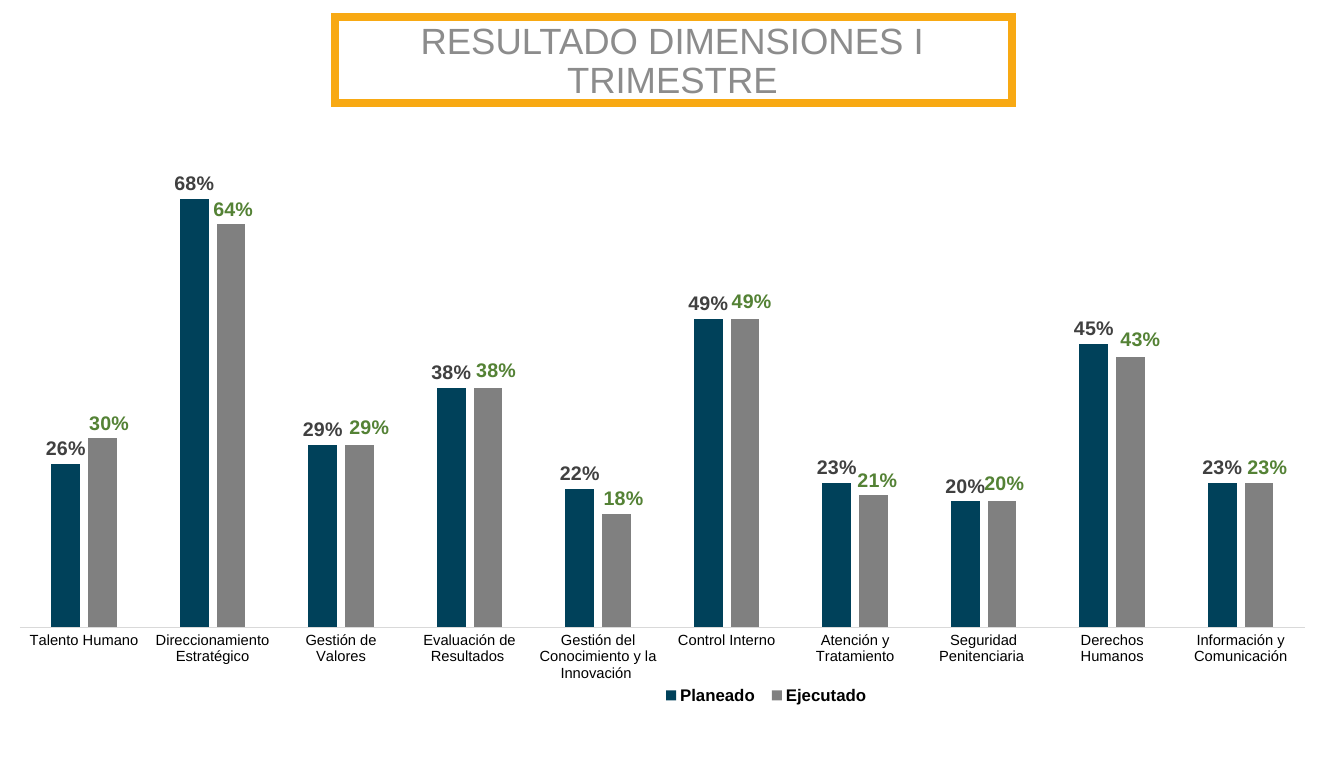
"""Slide with the planned and executed results of each dimension in the first quarter."""
from copy import deepcopy

from lxml import etree
from pptx import Presentation
from pptx.chart.data import CategoryChartData
from pptx.dml.color import RGBColor
from pptx.enum.chart import XL_CHART_TYPE, XL_LABEL_POSITION, XL_LEGEND_POSITION, XL_TICK_MARK
from pptx.enum.shapes import MSO_SHAPE
from pptx.enum.text import MSO_ANCHOR, PP_ALIGN
from pptx.oxml.ns import qn
from pptx.util import Cm, Pt

TITLE = "RESULTADO DIMENSIONES I TRIMESTRE"
RESULTS = [
    ("Talento Humano", 0.26, 0.30),
    ("Direccionamiento Estratégico", 0.68, 0.64),
    ("Gestión de Valores", 0.29, 0.29),
    ("Evaluación de Resultados ", 0.38, 0.38),
    ("Gestión del Conocimiento y la Innovación ", 0.22, 0.18),
    ("Control Interno", 0.49, 0.49),
    ("Atención y Tratamiento", 0.23, 0.21),
    ("Seguridad Penitenciaria ", 0.20, 0.20),
    ("Derechos Humanos", 0.45, 0.43),
    ("Información y Comunicación", 0.23, 0.23),
]
EXECUTED_LABEL_SHIFTS = [
    (0.17, 0), (0.06, 0), (0.25, -0.05), (0.21, -0.05), (0.18, 0),
    (0.17, -0.05), (0.1, 0.02), (0.06, -0.08), (0.25, -0.05), (0.21, 0),
]

NAVY = RGBColor(0x00, 0x41, 0x5A)
GRAY = RGBColor(0x80, 0x80, 0x80)
DARK_GRAY = RGBColor(0x40, 0x40, 0x40)
GREEN = RGBColor(0x54, 0x82, 0x35)
ORANGE = RGBColor(0xF8, 0xA9, 0x13)
TITLE_GRAY = RGBColor(0x8C, 0x8C, 0x8C)
AXIS_GRAY = RGBColor(0xD9, 0xD9, 0xD9)
BLACK = RGBColor(0, 0, 0)
SERIES_STYLES = [("Planeado", NAVY, DARK_GRAY), ("Ejecutado", GRAY, GREEN)]

COLUMNS = XL_CHART_TYPE.COLUMN_CLUSTERED
OUTSIDE_END = XL_LABEL_POSITION.OUTSIDE_END
LEGEND_BOTTOM = XL_LEGEND_POSITION.BOTTOM
NO_TICKS = XL_TICK_MARK.NONE
RECTANGLE = MSO_SHAPE.RECTANGLE
MIDDLE = MSO_ANCHOR.MIDDLE
CENTER = PP_ALIGN.CENTER

CHART_WIDTH, CHART_HEIGHT = 33.32, 15.19
PLOT_AREA = (0.53, 0.36, 32.32, 12.68)
LEGEND_AREA = (16.5, 14.45, 5.6, 0.6)


def set_font(font, size, color, bold=False, name="Arial"):
    font.size, font.bold, font.name = Pt(size), bold, name
    font.color.rgb = color


def manual_layout(modes, lengths):
    layout = etree.Element(qn("c:layout"))
    manual = etree.SubElement(layout, qn("c:manualLayout"))
    for tag, value in modes:
        etree.SubElement(manual, qn(f"c:{tag}"), val=value)
    for tag, length, whole in zip("xywh", lengths, (CHART_WIDTH, CHART_HEIGHT) * 2):
        etree.SubElement(manual, qn(f"c:{tag}"), val=str(length / whole))
    return layout


def place(element, position, modes, area):
    for old in element.findall(qn("c:layout")):
        element.remove(old)
    edges = [("xMode", "edge"), ("yMode", "edge")]
    element.insert(position, manual_layout(modes + edges, area))


def shift_labels(labels, shifts):
    parts = [part for part in labels if part.tag != qn("c:showLeaderLines")]
    for index, shift in enumerate(shifts):
        label = etree.Element(qn("c:dLbl"))
        etree.SubElement(label, qn("c:idx"), val=str(index))
        label.append(manual_layout([], shift))
        label.extend([deepcopy(part) for part in parts])
        labels.insert(index, label)


def add_title(slide):
    frame = slide.shapes.add_shape(RECTANGLE, Cm(8.43), Cm(0.43), Cm(17.02), Cm(2.16))
    frame.shadow.inherit = False
    frame.fill.background()
    frame.line.color.rgb = ORANGE
    frame.line.width = Pt(6)
    outline = frame._element.spPr.find(qn("a:ln"))
    etree.SubElement(outline, qn("a:miter"), lim="800000")
    title = slide.shapes.add_textbox(Cm(10.31), Cm(0.56), Cm(13.21), Cm(2)).text_frame
    title.word_wrap = True
    title.vertical_anchor = MIDDLE
    line = title.paragraphs[0]
    line.text = TITLE
    line.alignment = CENTER
    line.line_spacing = 0.9
    set_font(line.font, 26, TITLE_GRAY)


def add_results(slide):
    dimensions, *values = zip(*RESULTS)
    data = CategoryChartData(number_format="0%")
    data.categories = dimensions
    for (name, _, _), shares in zip(SERIES_STYLES, values):
        data.add_series(name, shares)
    chart = slide.shapes.add_chart(
        COLUMNS, Cm(-0.03), Cm(2.75), Cm(CHART_WIDTH), Cm(CHART_HEIGHT), data).chart
    set_font(chart.font, 9, BLACK, name="Roboto")
    chart.has_title = False

    plot = chart.plots[0]
    plot.gap_width, plot.overlap = 219, -27
    plot.vary_by_categories = False
    for series, (_, fill, label_color) in zip(plot.series, SERIES_STYLES):
        series.format.fill.solid()
        series.format.fill.fore_color.rgb = fill
        series.invert_if_negative = False
        labels = series.data_labels
        labels.show_value = True
        labels.number_format, labels.number_format_is_linked = "0%", False
        labels.position = OUTSIDE_END
        set_font(labels.font, 14, label_color, bold=True)
    executed = plot.series[1]
    shift_labels(executed.data_labels._element, EXECUTED_LABEL_SHIFTS)

    shares_axis = chart.value_axis
    shares_axis.minimum_scale, shares_axis.maximum_scale = 0, 0.8
    shares_axis.has_major_gridlines = False
    shares_axis.visible = False
    dimension_axis = chart.category_axis
    dimension_axis.major_tick_mark = dimension_axis.minor_tick_mark = NO_TICKS
    dimension_axis.format.line.color.rgb = AXIS_GRAY
    dimension_axis.format.line.width = Pt(0.75)
    set_font(dimension_axis.tick_labels.font, 10.5, BLACK)

    chart.has_legend = True
    chart.legend.position = LEGEND_BOTTOM
    chart.legend.include_in_layout = False
    set_font(chart.legend.font, 12, BLACK, bold=True)
    place(chart.legend._element, 1, [], LEGEND_AREA)
    plot_area = chart._chartSpace.find(".//" + qn("c:plotArea"))
    place(plot_area, 0, [("layoutTarget", "inner")], PLOT_AREA)


def main():
    deck = Presentation()
    deck.slide_width, deck.slide_height = Cm(33.8), Cm(19.5)
    slide = deck.slides.add_slide(deck.slide_layouts[6])
    add_title(slide)
    add_results(slide)
    deck.save("out.pptx")


if __name__ == "__main__":
    main()
